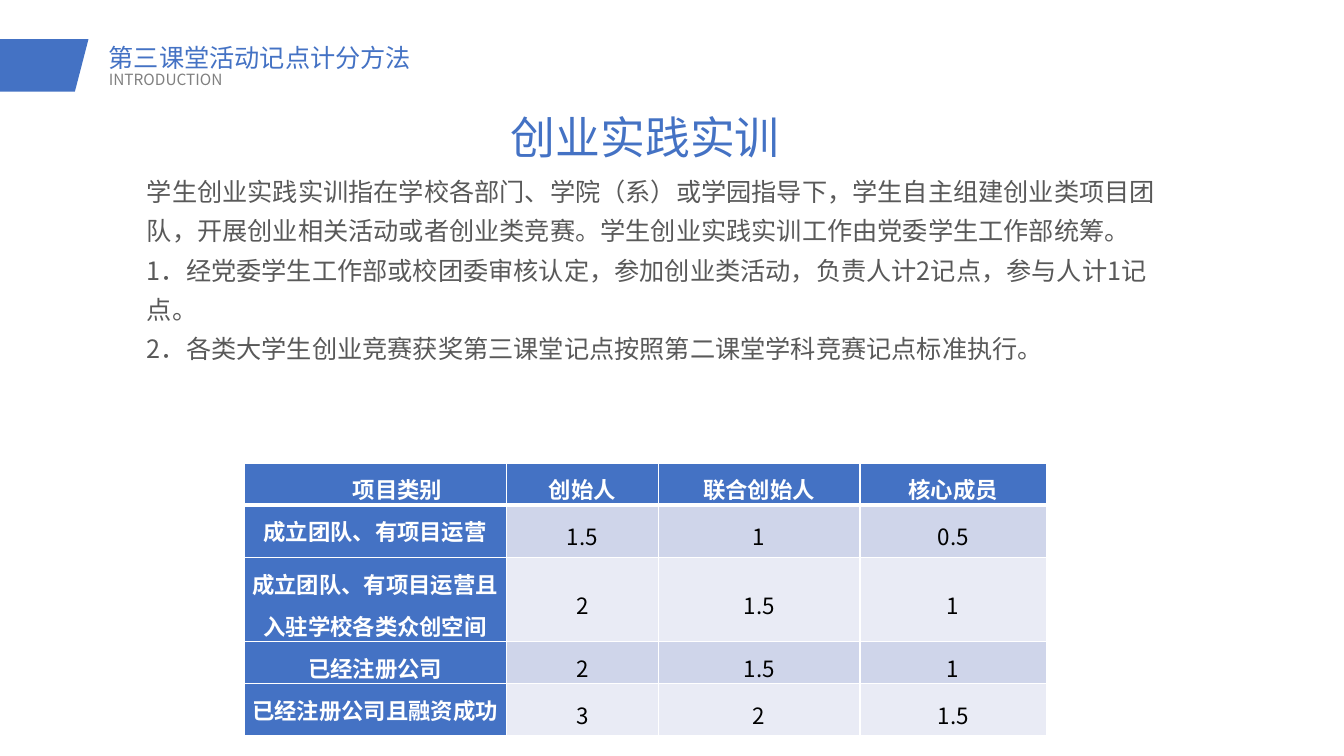
from lxml import etree
from pptx import Presentation
from pptx.dml.color import RGBColor
from pptx.enum.text import MSO_ANCHOR, MSO_AUTO_SIZE, PP_ALIGN
from pptx.oxml.ns import qn
from pptx.util import Pt

LEFT, CENTER = PP_ALIGN.LEFT, PP_ALIGN.CENTER
TOP, MIDDLE = MSO_ANCHOR.TOP, MSO_ANCHOR.MIDDLE
NO_FIT, GROW = MSO_AUTO_SIZE.NONE, MSO_AUTO_SIZE.SHAPE_TO_FIT_TEXT

BLUE, GRAY, DARK, WHITE, BLACK = "4472C4", "808080", "595959", "FFFFFF", "000000"
BANDS = ("CFD5EA", "E9EBF5")

INTRODUCTION = [
    "学生创业实践实训指在学校各部门、学院（系）或学园指导下，学生自主组建创业类项目团队，开展创业相关活动或者创业类竞赛。学生创业实践实训工作由党委学生工作部统筹。",
    "1．经党委学生工作部或校团委审核认定，参加创业类活动，负责人计2记点，参与人计1记点。",
    "2．各类大学生创业竞赛获奖第三课堂记点按照第二课堂学科竞赛记点标准执行。",
]
POINTS = [
    ("项目类别", "创始人", "联合创始人", "核心成员"),
    ("成立团队、有项目运营", "1.5", "1", "0.5"),
    ("成立团队、有项目运营且入驻学校各类众创空间", "2", "1.5", "1"),
    ("已经注册公司", "2", "1.5", "1"),
    ("已经注册公司且融资成功", "3", "2", "1.5"),
]
COLUMN_WIDTHS = (187.2, 108.7, 144, 133.2)
ROW_HEIGHTS = (22.3, 37.4, 55.4, 22.3, 37.4)


def color(value):
    return RGBColor.from_string(value)


class Page:
    font_name = "Noto Sans CJK SC"

    def __init__(self, deck):
        self.page = deck.slides.add_slide(deck.slide_layouts[6])

    def paragraphs(self, frame, lines, size, fill, bold=False, align=LEFT, spacing=1.0):
        for index, line in enumerate(lines):
            para = frame.paragraphs[0] if index == 0 else frame.add_paragraph()
            para.alignment = align
            para.line_spacing = spacing
            span = para.add_run()
            span.text = line
            formats = {"name": self.font_name, "size": Pt(size), "bold": bold}
            for name, value in formats.items():
                setattr(span.font, name, value)
            span.font.color.rgb = color(fill)
            east_asian = etree.SubElement(span.font._element, qn("a:ea"))
            east_asian.set("typeface", self.font_name)

    def text(self, place, lines, size, fill, align=LEFT, spacing=1.3, wrap=True, fit=GROW):
        box = self.page.shapes.add_textbox(*map(Pt, place))
        formats = {"word_wrap": wrap, "auto_size": fit, "vertical_anchor": TOP}
        for name, value in formats.items():
            setattr(box.text_frame, name, value)
        self.paragraphs(box.text_frame, lines, size, fill, align=align, spacing=spacing)

    def outline(self, corners, fill):
        points = [(Pt(x), Pt(y)) for x, y in corners]
        builder = self.page.shapes.build_freeform(*points[0])
        builder.add_line_segments(points[1:], close=True)
        shape = builder.convert_to_shape()
        shape.shadow.inherit = False
        shape.fill.solid()
        shape.fill.fore_color.rgb = color(fill)
        shape.line.fill.background()

    def borders(self, cell, top, bottom):
        properties = cell._tc.get_or_add_tcPr()
        widths = {"a:lnL": 1, "a:lnR": 1, "a:lnT": top, "a:lnB": bottom}
        for tag, width in widths.items():
            line = etree.SubElement(properties, qn(tag), w=str(Pt(width)))
            solid = etree.SubElement(line, qn("a:solidFill"))
            etree.SubElement(solid, qn("a:srgbClr"), val=WHITE)

    def table(self, left, top, rows, widths, heights):
        frame = self.page.shapes.add_table(
            len(rows), len(widths), Pt(left), Pt(top), Pt(sum(widths)), Pt(sum(heights)))
        grid = frame.table
        for column, width in zip(grid.columns, widths):
            column.width = Pt(width)
        for row, height in zip(grid.rows, heights):
            row.height = Pt(height)
        for r, values in enumerate(rows):
            for c, value in enumerate(values):
                heading = r == 0 or c == 0
                cell = grid.cell(r, c)
                formats = {
                    "margin_left": Pt(5), "margin_right": Pt(5),
                    "margin_top": 0, "margin_bottom": 0,
                    "vertical_anchor": TOP if r and c == 0 else MIDDLE,
                }
                for name, setting in formats.items():
                    setattr(cell, name, setting)
                self.borders(cell, 3 if r == 1 else 1, 3 if r == 0 else 1)
                cell.fill.solid()
                cell.fill.fore_color.rgb = color(BLUE if heading else BANDS[(r - 1) % 2])
                self.paragraphs(cell.text_frame, [value], 16, WHITE if heading else BLACK,
                                heading, CENTER, Pt(30))
        corner = grid.cell(0, 0).text_frame.paragraphs[0]
        corner._p.get_or_add_pPr().set("indent", str(Pt(32)))


def main():
    deck = Presentation()
    deck.slide_width, deck.slide_height = Pt(960), Pt(540)
    page = Page(deck)
    page.outline([(0, 28), (63.2, 28), (53.5, 65.5), (0, 65.5)], BLUE)
    page.text((70.6, 28.8, 620.6, 33.8), ["第三课堂活动记点计分方法"], 18, BLUE,
              spacing=0.9, fit=NO_FIT)
    page.text((70.6, 48.2, 620.6, 23.8), ["INTRODUCTION"], 11, GRAY,
              spacing=0.9, fit=NO_FIT)
    page.text((97.9, 115.9, 739.4, 115.2), INTRODUCTION, 18, DARK)
    page.text((357.8, 63.4, 206.6, 45.4), ["创业实践实训"], 32, BLUE, align=CENTER, wrap=False)
    page.table(174.4, 330.8, POINTS, COLUMN_WIDTHS, ROW_HEIGHTS)
    deck.save("out.pptx")


if __name__ == "__main__":
    main()
